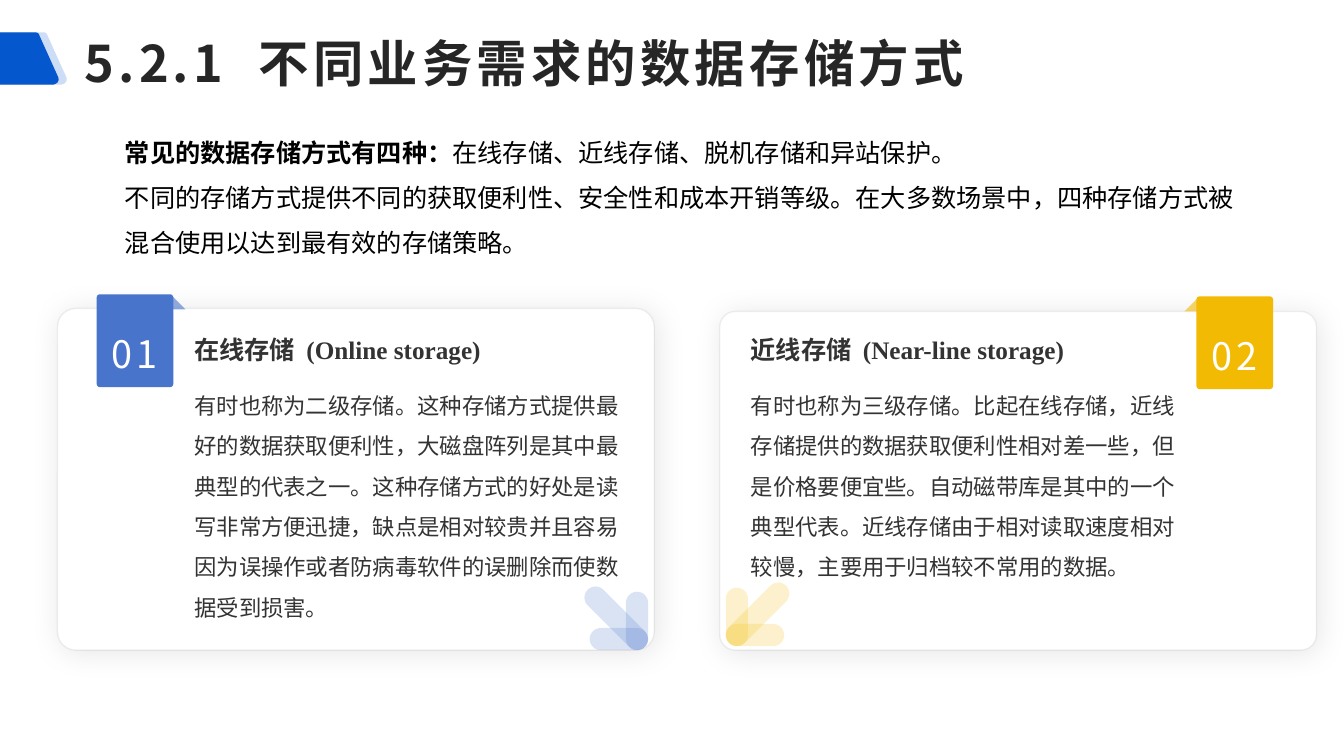
from pptx import Presentation
from pptx.dml.color import RGBColor
from pptx.enum.shapes import MSO_SHAPE as SHP
from pptx.enum.text import MSO_ANCHOR as ANC, MSO_AUTO_SIZE as AUTO, PP_ALIGN as AL
from pptx.oxml import parse_xml
from pptx.oxml.ns import nsdecls, qn
from pptx.util import Inches, Pt
from lxml.etree import SubElement

BLUE = RGBColor(0x05, 0x57, 0xCD)
TAG_BLUE = RGBColor(0x48, 0x74, 0xCB)
TAG_GOLD = RGBColor(0xF2, 0xBA, 0x02)
WHITE = RGBColor(0xFF, 0xFF, 0xFF)
BLACK = RGBColor(0, 0, 0)
INK = RGBColor(0x26, 0x26, 0x26)
GREY = RGBColor(0x33, 0x33, 0x33)
SANS, SERIF = "Noto Sans CJK SC", "Times New Roman"

CARDS = [
    dict(box=(1.71, 9.18, 17.76, 10.17), radius=0.054, tag=(2.88, 8.76), fold=2.22, turn=0,
         tip=(18.96, 19.02), side=-1, text=5.49, color=TAG_BLUE, number="01",
         name="在线存储", english="(Online storage)",
         body="有时也称为二级存储。这种存储方式提供最好的数据获取便利性，大磁盘阵列是其中最"
              "典型的代表之一。这种存储方式的好处是读写非常方便迅捷，缺点是相对较贵并且容易"
              "因为误操作或者防病毒软件的误删除而使数据受到损害。"),
    dict(box=(21.42, 9.27, 17.76, 10.08), radius=0.046, tag=(35.61, 8.82), fold=-0.36, turn=270,
         tip=(21.93, 18.9), side=1, text=22.05, color=TAG_GOLD, number="02",
         name="近线存储", english="(Near-line storage)",
         body="有时也称为三级存储。比起在线存储，近线存储提供的数据获取便利性相对差一些，但"
              "是价格要便宜些。自动磁带库是其中的一个典型代表。近线存储由于相对读取速度相对"
              "较慢，主要用于归档较不常用的数据。"),
]


class Board:
    """Draws on one slide, with lengths in cells of a 40 by 22.5 grid."""

    def __init__(self, prs):
        """Add a title-only slide and derive the cell from the slide width."""
        self.cell = prs.slide_width / 40
        self.s = prs.slides.add_slide(prs.slide_layouts[5])

    def grid(self, *cells):
        """Turn cells into lengths."""
        return [round(c * self.cell) for c in cells]

    def fade(self, fill, alpha):
        """Give a solid fill an opacity in percent."""
        color = fill._xPr.find(qn("a:solidFill"))[0]
        SubElement(color, qn("a:alpha")).set("val", str(alpha * 1000))

    def paint(self, sp, color, alpha=100):
        """Fill a shape and drop its outline and shadow."""
        sp.shadow.inherit = False
        sp.fill.solid()
        sp.fill.fore_color.rgb = color
        if alpha < 100:
            self.fade(sp.fill, alpha)
        sp.line.fill.background()
        return sp

    def shape(self, kind, box, color, alpha=100, radius=None, turn=0):
        """Add a painted preset shape."""
        sp = self.s.shapes.add_shape(kind, *self.grid(*box))
        if radius is not None:
            sp.adjustments[0] = radius
        sp.rotation = turn
        return self.paint(sp, color, alpha)

    def panel(self, box, radius):
        """Add a white card with a faint outline and a soft shadow."""
        sp = self.shape(SHP.ROUNDED_RECTANGLE, box, WHITE, radius=radius)
        sp.line.width = Pt(1)
        sp.line.color.rgb = BLACK
        self.fade(sp.line.fill, 5)
        sp._element.spPr.find(qn("a:effectLst")).append(parse_xml(
            f'<a:outerShdw {nsdecls("a")} blurRad="{Pt(22)}" dist="{Pt(3)}" dir="2700000" '
            'rotWithShape="0"><a:srgbClr val="000000"><a:alpha val="10000"/></a:srgbClr>'
            '</a:outerShdw>'))

    def bar(self, center, size, color, turn=0):
        """Add a translucent bar with round ends around a centre."""
        (x, y), (w, h) = center, size
        self.shape(SHP.ROUNDED_RECTANGLE, (x - w / 2, y - h / 2, w, h), color, 20, 0.5, turn)

    def arrow(self, tip, side, color):
        """Add three bars that meet at the tip of an arrow."""
        x, y = tip
        self.bar((x + side * 0.54, y), (1.74, 0.66), color)
        self.bar((x, y - 0.54), (0.66, 1.74), color)
        self.bar((x + side * 0.62, y - 0.62), (2.4, 0.66), color, -45 * side)

    def ribbon(self, shift, color, alpha=100):
        """Add a slanted ribbon from the left edge with rounded right corners."""
        corners = [[(1.29, 0.96), (1.4, 0.97), (1.42, 1.07)],
                   [(1.98, 2.31), (2.02, 2.47), (1.83, 2.52)]]
        pts = [(0, 0.96)]
        for a, b, c in corners:
            for t in (0, 0.25, 0.5, 0.75, 1):
                pts.append([(1 - t) ** 2 * i + 2 * t * (1 - t) * j + t * t * k
                            for i, j, k in zip(a, b, c)])
        pts.append((0, 2.52))
        pts = [self.grid(max(x + shift, 0) if x else 0, y) for x, y in pts]
        fb = self.s.shapes.build_freeform(*pts[0])
        fb.add_line_segments(pts[1:])
        self.paint(fb.convert_to_shape(), color, alpha)

    def add_runs(self, p, runs, face, **style):
        """Fill a paragraph with (text, bold, letter spacing) runs."""
        for text, bold, gap in runs:
            r = p.add_run()
            r.text = text
            for key, value in dict(style, name=face, bold=bold).items():
                if key == "color":
                    r.font.color.rgb = value
                else:
                    setattr(r.font, key, value)
            rPr = r._r.get_or_add_rPr()
            SubElement(rPr, qn("a:ea")).set("typeface", SANS)
            if gap:
                rPr.set("spc", str(gap * 100))

    def title(self, box, runs):
        """Place and fill the title placeholder."""
        sp = self.s.shapes.title
        for key, value in zip(("left", "top", "width", "height"), self.grid(*box)):
            setattr(sp, key, value)
        tf = sp.text_frame
        tf.auto_size, tf.vertical_anchor = AUTO.NONE, ANC.MIDDLE
        tf.paragraphs[0].alignment = AL.LEFT
        self.add_runs(tf.paragraphs[0], runs, SANS, size=Pt(36), color=INK)

    def prose(self, box, paras, color):
        """Add a wrapped text box from (size, space after, runs) paragraphs."""
        tf = self.s.shapes.add_textbox(*self.grid(*box)).text_frame
        tf.word_wrap = True
        for i, (size, after, runs) in enumerate(paras):
            p = tf.add_paragraph() if i else tf.paragraphs[0]
            p.line_spacing, p.space_after = 1.5, Pt(after)
            self.add_runs(p, runs, SERIF, size=Pt(size), color=color)

    def number(self, box, text):
        """Add a centred white number without insets."""
        tf = self.s.shapes.add_textbox(*self.grid(*box)).text_frame
        for side in ("left", "top", "right", "bottom"):
            setattr(tf, f"margin_{side}", 0)
        tf.word_wrap, tf.vertical_anchor = True, ANC.MIDDLE
        tf.paragraphs[0].alignment = AL.CENTER
        self.add_runs(tf.paragraphs[0], [(text, False, 3)], SANS, size=Pt(27), color=WHITE)

    def card(self, box, radius, tag, fold, turn, tip, side, text, color, number, name,
             english, body):
        """Add one storage card with its tag, arrow and text."""
        x, y = tag
        self.panel(box, radius)
        self.shape(SHP.RIGHT_TRIANGLE, (x + fold, y + 0.03, 0.42, 0.42), color, 60, turn=turn)
        self.shape(SHP.ROUNDED_RECTANGLE, (x, y, 2.28, 2.76), color, radius=0.04)
        self.arrow(tip, side, color)
        self.number((x + 0.2, y + 0.94, 1.86, 1.65), number)
        heading = [(name, True, 0), (" ", True, 4), (english, True, 0)]
        self.prose((text, 9.36, 13.35, 8.94),
                   [(18, 10, heading), (16, 0, [(body, False, 0)])], GREY)


def main():
    """Build the slide and save it."""
    prs = Presentation()
    prs.slide_width, prs.slide_height = Inches(40 / 3), Inches(7.5)
    board = Board(prs)
    board.ribbon(0, BLUE, 20)
    board.ribbon(-0.24, BLUE)
    board.title((2.22, 0.36, 37.77, 3),
                [("5.2.1", True, 3), (" ", True, 14), ("不同业务需求的数据存储方式", True, 3)])
    board.prose((3.42, 3.48, 34.26, 4.38), [
        (18, 0, [("常见的数据存储方式有四种：", True, 0),
                 ("在线存储、近线存储、脱机存储和异站保护。", False, 0)]),
        (18, 0, [("不同的存储方式提供不同的获取便利性、安全性和成本开销等级。在大多数场景中，"
                  "四种存储方式被混合使用以达到最有效的存储策略。", False, 0)])], BLACK)
    for card in CARDS:
        board.card(**card)
    prs.save("out.pptx")


if __name__ == "__main__":
    main()
